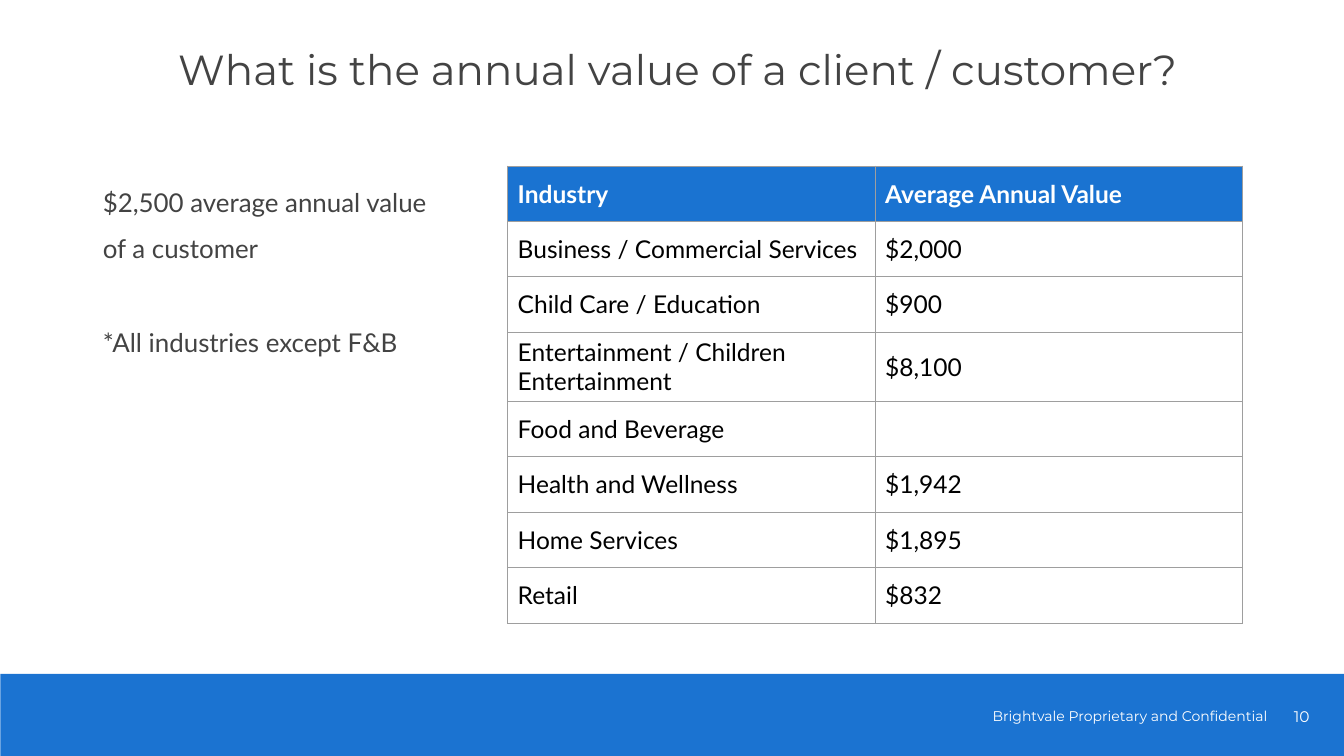
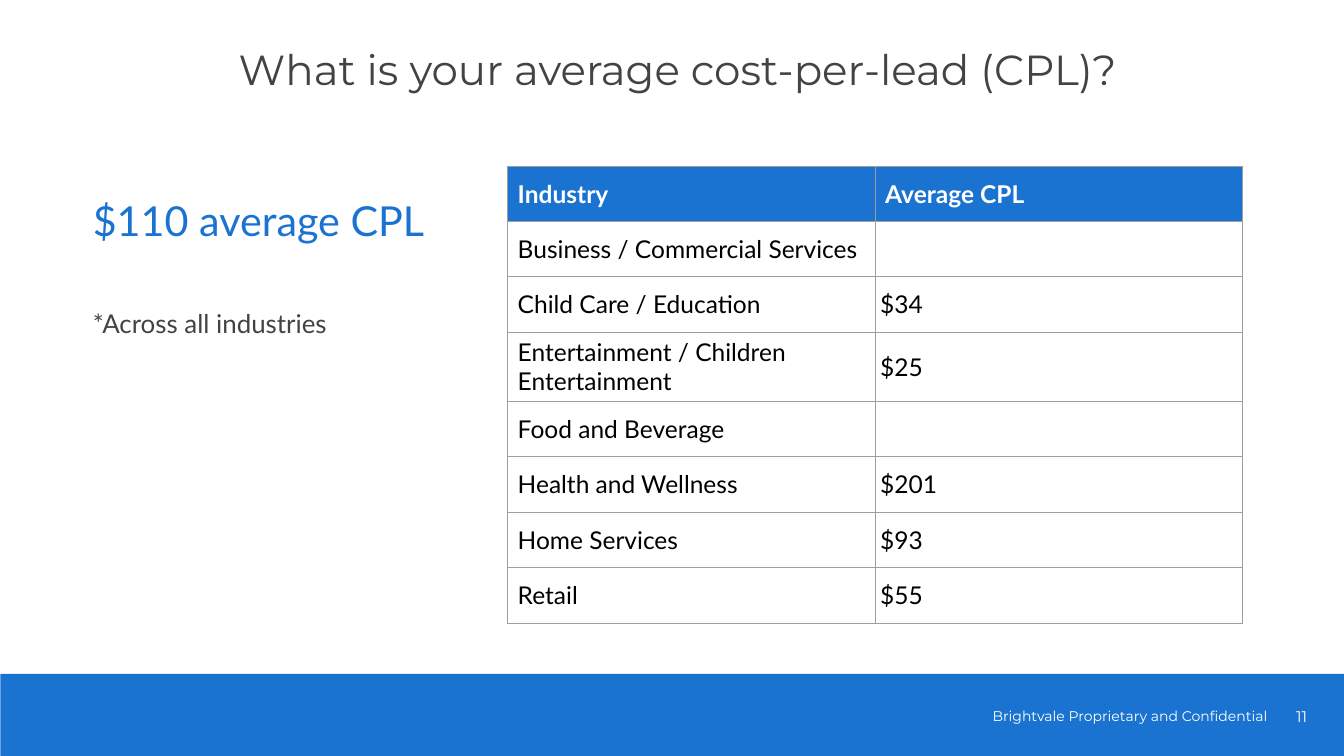
from lxml import etree
from pptx import Presentation
from pptx import util as u
from pptx.dml.color import RGBColor
from pptx.enum import shapes, text
from pptx.oxml import ns

Inches, Pt = u.Inches, u.Pt

BAND_BLUE = RGBColor(0x1B, 0x73, 0xD1)
ACCENT_BLUE = RGBColor(0x1A, 0x73, 0xD1)
GREY = RGBColor(0x43, 0x43, 0x43)
BORDER_GREY = RGBColor(0x9E, 0x9E, 0x9E)
WHITE = RGBColor(0xFF, 0xFF, 0xFF)
BLACK = RGBColor(0, 0, 0)
HEADING_FONT, BODY_FONT = "Montserrat", "Lato"

SLIDE_W, SLIDE_H = 26.66, 15
INSET = 0.1
TITLE_BOX = (1.94, 0.77, 23, 1.32)
BAND_BOX = (0.01, 13.37, 26.66, 1.63)
TABLE_BOX = (10.07, 3.29, 14.58, 8.89)
ROW_H, TALL_ROW_H, TALL_ROW = 1.1, 1.19, 3

INDUSTRIES = ["Business / Commercial Services", "Child Care / Education",
              "Entertainment / Children Entertainment", "Food and Beverage",
              "Health and Wellness", "Home Services", "Retail"]

# Each slide: title, left edge of takeaway, (text, size, colour) lines,
# value heading, values by industry, indent of the values
SLIDES = [
    dict(title="What is the annual value of a client / customer?",
         takeaway_left=1.94,
         takeaway=[("$2,500 average annual value of a customer", 37, GREY),
                   ("*All industries except F&B", 37, GREY)],
         heading="Average Annual Value",
         values=["$2,000", "$900", "$8,100", "", "$1,942", "$1,895", "$832"],
         value_indent=0.1),
    dict(title="What is your average cost-per-lead (CPL)?",
         takeaway_left=1.74,
         takeaway=[("$110 average CPL", 59, ACCENT_BLUE),
                   ("*Across all industries", 37, GREY)],
         heading="Average CPL",
         values=["", "$34", "$25", "", "$201", "$93", "$55"],
         value_indent=0),
]
FIRST_PAGE = 10


def place(shape, box):
    shape.left, shape.top, shape.width, shape.height = map(Inches, box)


def set_frame(frame, anchor):
    frame.word_wrap = True
    frame.auto_size = text.MSO_AUTO_SIZE.NONE
    frame.vertical_anchor = anchor
    frame.margin_left = frame.margin_right = Inches(INSET)
    frame.margin_top = frame.margin_bottom = Inches(INSET)


def style(paragraph, font, size, color, bold=False):
    for run in paragraph.runs:
        run.font.name, run.font.size = font, Pt(size)
        run.font.color.rgb, run.font.bold = color, bold


def set_indent(paragraph, left):
    properties = paragraph._p.get_or_add_pPr()
    properties.set("marL", str(Inches(left)))
    properties.set("indent", "0")
    return properties


def add_title(slide, box, wording):
    title = slide.shapes.title
    place(title, box)
    set_frame(title.text_frame, text.MSO_ANCHOR.TOP)
    title.text_frame.text = wording
    heading = title.text_frame.paragraphs[0]
    heading.alignment = text.PP_ALIGN.CENTER
    style(heading, HEADING_FONT, 60, GREY)


def add_band_text(slide, box, wording, size, align):
    label = slide.shapes.add_textbox(*map(Inches, box))
    set_frame(label.text_frame, text.MSO_ANCHOR.MIDDLE)
    label.text_frame.text = wording
    line = label.text_frame.paragraphs[0]
    line.alignment = align
    style(line, HEADING_FONT, size, WHITE)


def add_footer(slide, box, page):
    left, top, _, _ = box
    band = slide.shapes.add_shape(shapes.MSO_SHAPE.RECTANGLE, *map(Inches, box))
    band.shadow.inherit = False
    band.fill.solid()
    band.fill.fore_color.rgb = BAND_BLUE
    band.line.fill.background()
    add_band_text(slide, (left + 19.58, top + 0.56, 5.86, 0.54),
                  "Brightvale Proprietary and Confidential", 20,
                  text.PP_ALIGN.LEFT)
    add_band_text(slide, (left + 25.11, top + 0.33, 1.4, 1.01), str(page), 22,
                  text.PP_ALIGN.CENTER)


def add_takeaway(slide, box, lines):
    body = slide.placeholders[1]
    place(body, box)
    frame = body.text_frame
    set_frame(frame, text.MSO_ANCHOR.TOP)
    frame.text = "\n".join(wording for wording, _, _ in lines)
    for i, (line, (_, size, color)) in enumerate(zip(frame.paragraphs, lines)):
        etree.SubElement(set_indent(line, 0), ns.qn("a:buNone"))
        line.line_spacing = 1.5
        line.space_before = Pt(67 if i else 0)
        style(line, BODY_FONT, size, color)


def add_borders(cell):
    properties = cell._tc.get_or_add_tcPr()
    for side in ("lnL", "lnR", "lnT", "lnB"):
        edge = etree.SubElement(properties, ns.qn(f"a:{side}"), w=str(Pt(0.75)))
        fill = etree.SubElement(edge, ns.qn("a:solidFill"))
        etree.SubElement(fill, ns.qn("a:srgbClr"), val=str(BORDER_GREY))


def fill_cell(cell, wording, is_header, indent):
    add_borders(cell)
    if is_header:
        cell.fill.solid()
        cell.fill.fore_color.rgb = ACCENT_BLUE
    else:
        cell.fill.background()
    cell.vertical_anchor = text.MSO_ANCHOR.MIDDLE
    cell.margin_left = cell.margin_right = Inches(INSET)
    cell.margin_top = cell.margin_bottom = Inches(INSET)
    cell.text_frame.text = wording
    line = cell.text_frame.paragraphs[0]
    set_indent(line, indent)
    style(line, BODY_FONT, 35, WHITE if is_header else BLACK, is_header)


def add_industry_table(slide, box, heading, values, value_indent):
    rows = [("Industry", heading), *zip(INDUSTRIES, values)]
    table = slide.shapes.add_table(len(rows), 2, *map(Inches, box)).table
    table.first_row = table.horz_banding = False
    for column in table.columns:
        column.width = Inches(box[2] / 2)
    for r, (industry, value) in enumerate(rows):
        table.rows[r].height = Inches(TALL_ROW_H if r == TALL_ROW else ROW_H)
        is_header = r == 0
        fill_cell(table.cell(r, 0), industry, is_header, 0.1)
        fill_cell(table.cell(r, 1), value, is_header,
                  0.1 if is_header else value_indent)


def add_benchmark_slide(deck, page, content):
    slide = deck.slides.add_slide(deck.slide_layouts[1])
    add_footer(slide, BAND_BOX, page)
    add_title(slide, TITLE_BOX, content["title"])
    add_takeaway(slide, (content["takeaway_left"], 3.29, 7.06, 7.48),
                 content["takeaway"])
    add_industry_table(slide, TABLE_BOX, content["heading"],
                       content["values"], content["value_indent"])


def main():
    deck = Presentation()
    deck.slide_width, deck.slide_height = Inches(SLIDE_W), Inches(SLIDE_H)
    for page, content in enumerate(SLIDES, FIRST_PAGE):
        add_benchmark_slide(deck, page, content)
    deck.save("out.pptx")


if __name__ == "__main__":
    main()
